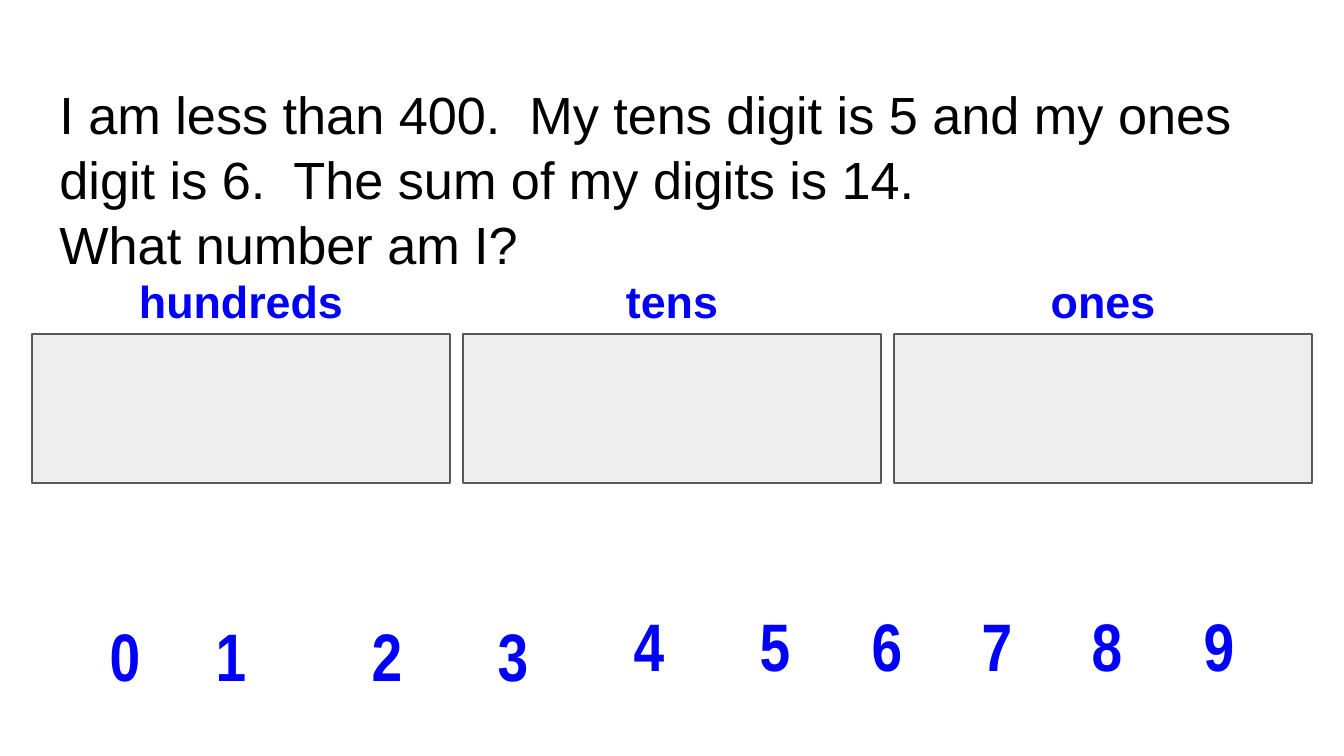
import pptx
import pptx.dml.color
import pptx.enum.shapes
import pptx.enum.text
import pptx.util

PX = 914400 / 134.4
BLACK = pptx.dml.color.RGBColor(0x00, 0x00, 0x00)
BLUE = pptx.dml.color.RGBColor(0x00, 0x00, 0xFF)
PALE_GRAY = pptx.dml.color.RGBColor(0xEE, 0xEE, 0xEE)
DARK_GRAY = pptx.dml.color.RGBColor(0x59, 0x59, 0x59)
ALIGN = pptx.enum.text.PP_ALIGN
ANCHOR = pptx.enum.text.MSO_ANCHOR


def px(*lengths):
    return [pptx.util.Emu(round(length * PX)) for length in lengths]


def write(box, lines, font, size, color, bold, align, anchor):
    frame = box.text_frame
    frame.word_wrap = True
    frame.auto_size = pptx.enum.text.MSO_AUTO_SIZE.NONE
    frame.vertical_anchor = anchor
    frame.margin_left = frame.margin_right = pptx.util.Inches(0.1)
    frame.margin_top = frame.margin_bottom = pptx.util.Inches(0.1)
    for index, line in enumerate(lines):
        para = frame.add_paragraph() if index else frame.paragraphs[0]
        para.alignment = align
        span = para.add_run()
        span.text = line
        span.font.name = font
        span.font.size = pptx.util.Pt(size)
        span.font.bold = bold
        span.font.color.rgb = color


deck = pptx.Presentation()
deck.slide_width, deck.slide_height = px(1344, 756)
page = deck.slides.add_slide(deck.slide_layouts[5])

# Riddle
title = page.shapes.title
title.left, title.top, title.width, title.height = px(46, 66, 1253, 204)
riddle = [
    "I am less than 400.  My tens digit is 5 and my ones digit is 6.  The sum of my digits is 14.",
    "What number am I?",
]
write(title, riddle, "Arial", 28, BLACK, False, ALIGN.LEFT, ANCHOR.TOP)
for para in title.text_frame.paragraphs:
    para.line_spacing = 1.04
    para.space_before = pptx.util.Pt(0)

# Place value columns: answer boxes in one group, a heading above each
answers = page.shapes.add_group_shape()
for column, place in enumerate(["hundreds", "tens", "ones"]):
    left = 32 + 431 * column
    answer = answers.shapes.add_shape(
        pptx.enum.shapes.MSO_SHAPE.RECTANGLE, *px(left, 334, 418, 149))
    answer.shadow.inherit = False
    answer.fill.solid()
    answer.fill.fore_color.rgb = PALE_GRAY
    answer.line.color.rgb = DARK_GRAY
    answer.line.width = pptx.util.Pt(0.75)

    heading = page.shapes.add_textbox(*px(left, 260, 418, 74))
    write(heading, [place], "Arial", 24, BLUE, True, ALIGN.CENTER, ANCHOR.TOP)

# Digits to drag, the first four slightly lower
digit_lefts = [70, 176, 332, 458, 594, 720, 832, 942, 1052, 1164]
for digit, left in enumerate(digit_lefts):
    top = 604 if digit < 4 else 594
    tile = page.shapes.add_textbox(*px(left, top, 110, 102))
    write(tile, [str(digit)], "Arial Narrow", 36, BLUE, True, ALIGN.CENTER, ANCHOR.MIDDLE)

deck.save("out.pptx")
